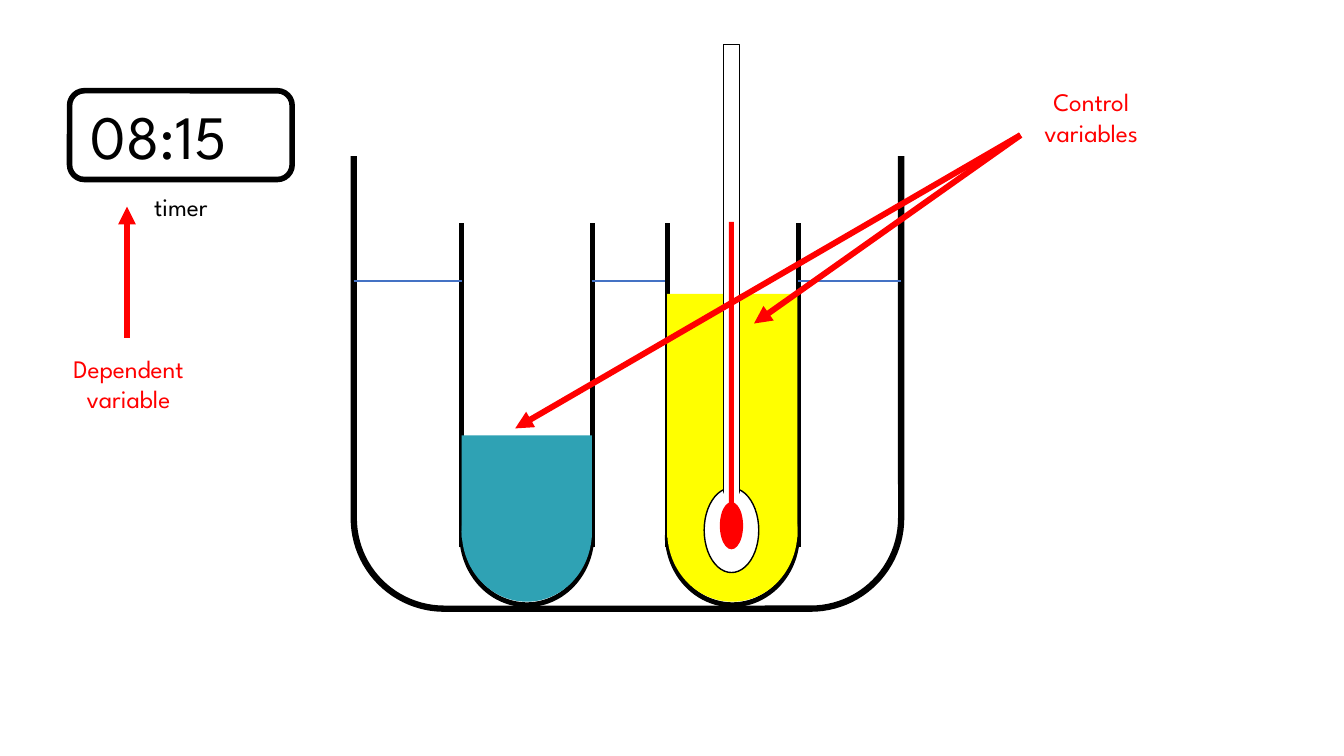
from lxml import etree
from pptx import Presentation
from pptx.dml.color import RGBColor
from pptx.enum import shapes, text
from pptx.oxml.ns import qn
from pptx.util import Pt

COLORS = {
    "black": "000000",
    "white": "FFFFFF",
    "red": "FF0000",
    "teal": "2FA2B4",
    "yellow": "FFFF00",
    "water": "4472C4",
}
FONT = "League Spartan"
RECTANGLE = shapes.MSO_SHAPE.RECTANGLE
ROUNDED = shapes.MSO_SHAPE.ROUNDED_RECTANGLE
OVAL = shapes.MSO_SHAPE.OVAL


def rgb(color):
    return RGBColor.from_string(COLORS[color])


def add_shape(slide, kind, box, fill=None, line=None, width=1):
    shape = slide.shapes.add_shape(kind, *map(Pt, box))
    shape.shadow.inherit = False
    if fill:
        shape.fill.solid()
        shape.fill.fore_color.rgb = rgb(fill)
    else:
        shape.fill.background()
    if line:
        shape.line.color.rgb = rgb(line)
        shape.line.width = Pt(width)
    else:
        shape.line.fill.background()
    return shape


def add_line(slide, start, end, color, width, arrow=False):
    connector = slide.shapes.add_connector(
        shapes.MSO_CONNECTOR.STRAIGHT, *map(Pt, (*start, *end)))
    connector.line.color.rgb = rgb(color)
    connector.line.width = Pt(width)
    if arrow:
        line = connector.line._get_or_add_ln()
        etree.SubElement(line, qn("a:tailEnd"), type="triangle")
    properties = connector._element.spPr
    etree.SubElement(properties, qn("a:effectLst"))


def add_label(slide, box, words, color="black", size=18,
              align=text.PP_ALIGN.CENTER):
    frame = slide.shapes.add_textbox(*map(Pt, box)).text_frame
    frame.word_wrap = True
    paragraph = frame.paragraphs[0]
    paragraph.alignment = align
    run = paragraph.add_run()
    run.text = words
    for name, value in {"name": FONT, "size": Pt(size)}.items():
        setattr(run.font, name, value)
    run.font.color.rgb = rgb(color)


def add_beaker(slide, box):
    left, top, width, height = box
    add_shape(slide, ROUNDED, box, line="black", width=4.5)
    # A white band opens the top of the beaker.
    add_shape(slide, RECTANGLE, (left - 44, top - 15, width + 142, 79),
              "white", "white")


def add_test_tube(slide, box, liquid, liquid_top):
    left, top, width, height = box
    bottom = top + height
    bowl = 100
    add_shape(slide, OVAL, (left, bottom - bowl, width, bowl),
              line="black", width=3.5)
    # A white band hides the upper half of the bowl.
    add_shape(slide, RECTANGLE, (left - 25, bottom - 169, width + 51, 119),
              "white", "white")
    for x in (left, left + width + 0.5):
        add_line(slide, (x, bottom - 41), (x, top), "black", 3.5)
    add_shape(slide, OVAL, (left, bottom - bowl - 2.2, width, bowl), liquid)
    add_shape(slide, RECTANGLE,
              (left, liquid_top, width, bottom - 48 - liquid_top), liquid)


def add_thermometer(slide, box):
    left, top, width, height = box
    center = left + width / 2
    bottom = top + height
    parts = [
        (OVAL, 39, bottom - 60.5, 60.5, "white", "black"),
        (RECTANGLE, 11.5, top, 337.7, "white", "black"),
        (OVAL, 14.4, bottom - 62, 34.6, "white", "white"),
        (RECTANGLE, 3.6, top + 126.7, 222.5, "red", None),
        (OVAL, 16.6, bottom - 50.4, 33.8, "red", None),
    ]
    for kind, part_width, y, part_height, fill, line in parts:
        add_shape(slide, kind,
                  (center - part_width / 2, y, part_width, part_height),
                  fill, line)


def add_water_level(slide, y, spans):
    for start, end in spans:
        add_line(slide, (start, y), (end, y), "water", 1.5)


def add_timer(slide, box):
    left, top, width, height = box
    add_shape(slide, ROUNDED, box, line="black", width=4)
    add_label(slide, (left + 7.9, top + 1.4, width, 60.5), "08:15",
              size=44, align=text.PP_ALIGN.LEFT)
    add_label(slide, (left + 41, top + height + 5, 77, 29), "timer")


def add_callout(slide, box, words, arrows):
    """Place a red label and its arrows, given as (start, end) offsets."""
    left, top = box[:2]
    for start, end in arrows:
        add_line(slide, (left + start[0], top + start[1]),
                 (left + end[0], top + end[1]), "red", 4.25, arrow=True)
    add_label(slide, box, words, "red")


def main():
    presentation = Presentation()
    presentation.slide_width = Pt(960)
    presentation.slide_height = Pt(540)
    slide = presentation.slides.add_slide(presentation.slide_layouts[6])

    add_beaker(slide, (252.7, 46.8, 391, 388))
    for left, liquid, liquid_top in ((329.8, "teal", 311),
                                     (476.6, "yellow", 210)):
        add_test_tube(slide, (left, 159.5, 93, 272.5), liquid, liquid_top)
    add_thermometer(slide, (503, 31.7, 39, 377.3))
    add_water_level(slide, 200.9,
                    ((252.7, 329.8), (422.6, 475.2), (570.2, 643.7)))
    add_timer(slide, (49.7, 64.8, 159, 63.4))
    add_callout(slide, (22.3, 249, 139, 51), "Dependent variable",
                [((68.4, -7.8), (68.4, -101.4))])
    add_callout(slide, (710, 58.3, 139, 51), "Control variables",
                [((19, 38.2), (-171.4, 172.8)),
                 ((19, 38.2), (-342, 247.7))])
    presentation.save("out.pptx")


if __name__ == "__main__":
    main()
